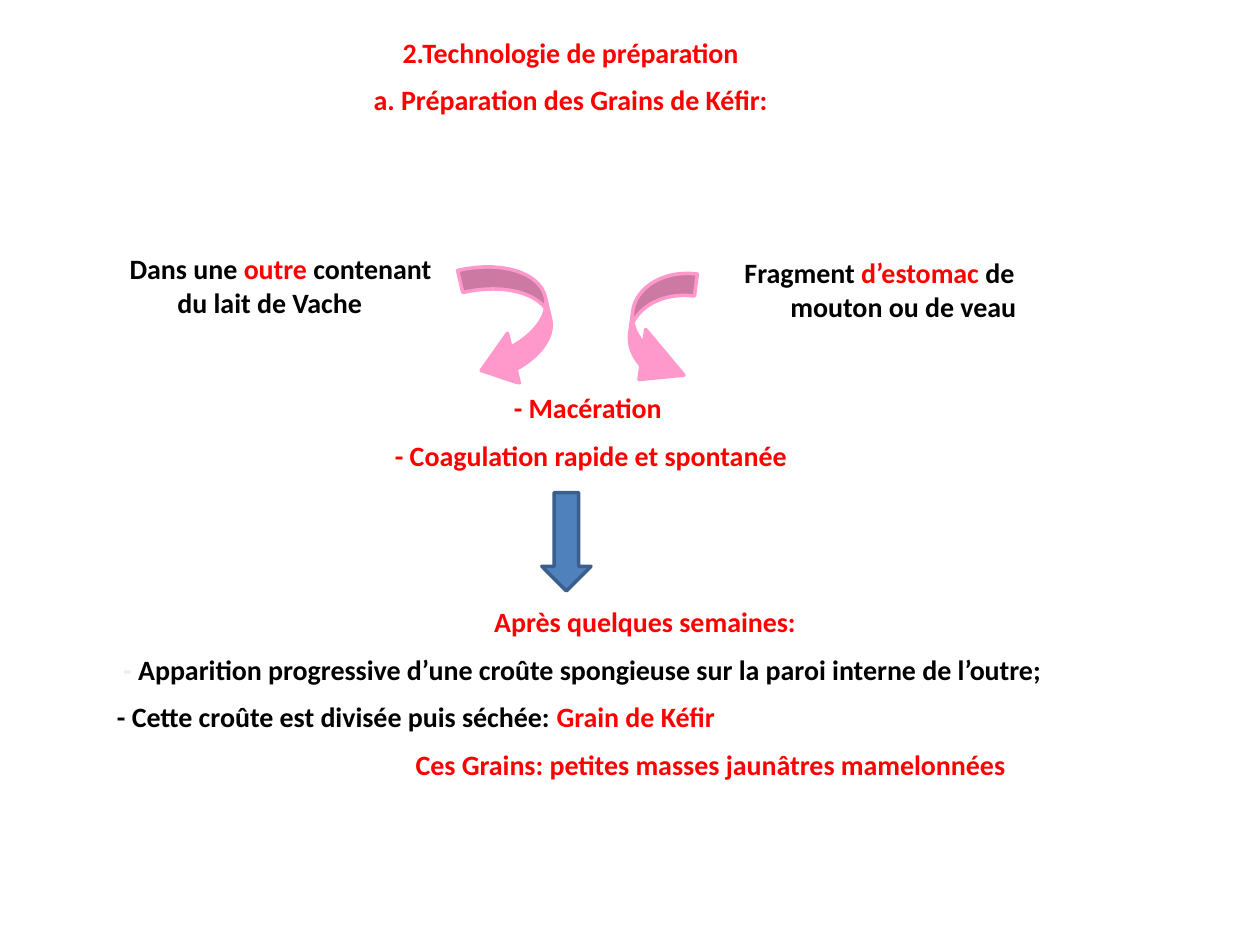
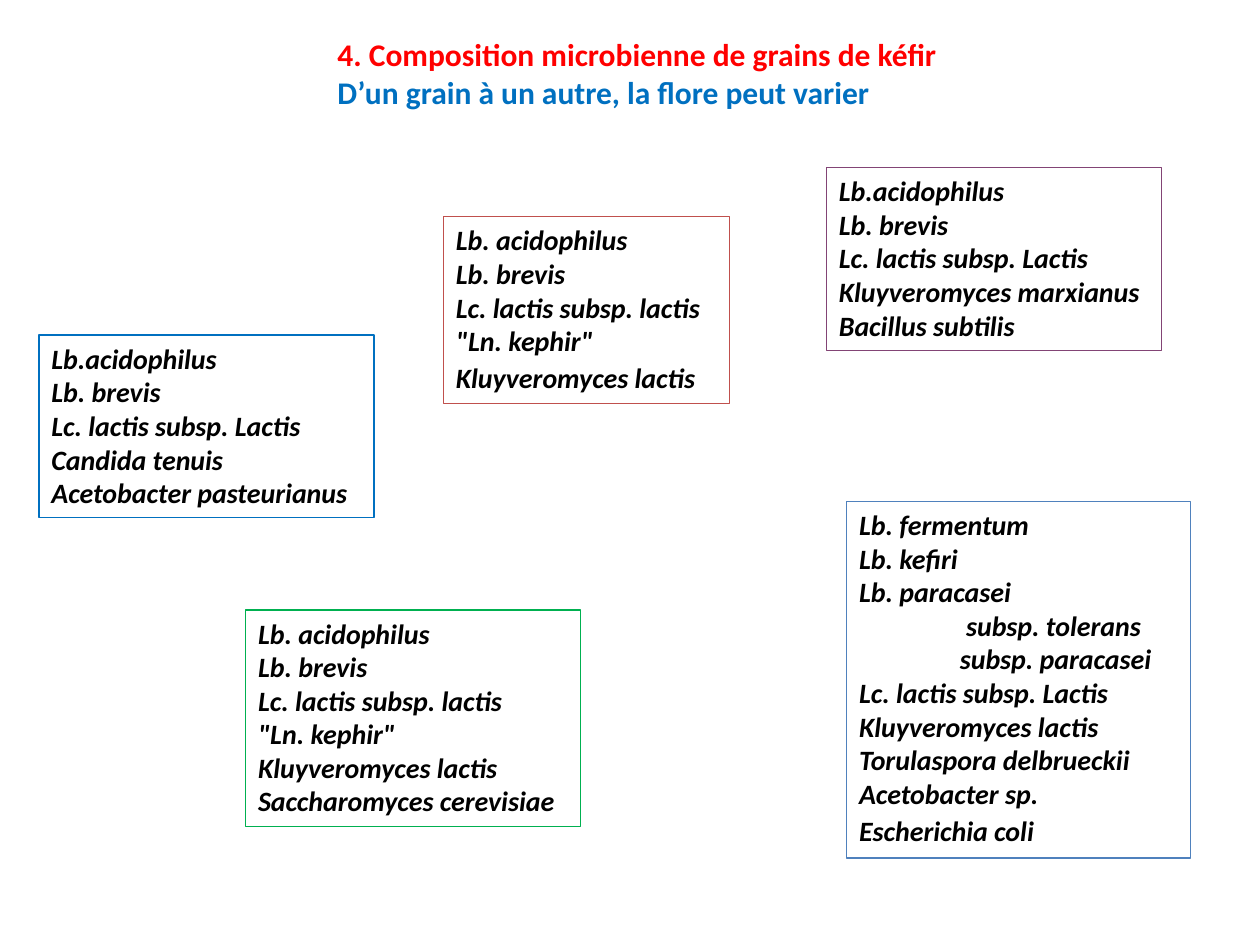
from dataclasses import dataclass
from typing import Optional

from pptx import Presentation
from pptx import util as u
from pptx.dml.color import RGBColor
from pptx.enum import shapes, text

FONT = "Calibri"
HANG = 0.38
COLORS = {
    "red": "FF0000",
    "black": "000000",
    "cream": "EEECE1",
    "white": "FFFFFF",
    "pink": "FF99CC",
    "blue": "4F81BD",
    "navy": "3A5F8C",
    "azure": "0070C0",
    "brick": "C0504D",
    "green": "00B050",
    "plum": "824475",
}
LEFT, CENTER = text.PP_ALIGN.LEFT, text.PP_ALIGN.CENTER
KINDS = shapes.MSO_SHAPE


@dataclass
class Line:
    spans: list[tuple[str, str]]
    align: text.PP_ALIGN = LEFT
    margin: float = 0
    indent: float = 0
    before: float = 0


@dataclass
class TextBlock:
    frame: tuple[float, float, float, float]
    lines: list[Line]
    size: int = 16
    italic: bool = False
    fill: Optional[str] = None
    outline: Optional[str] = None


@dataclass
class Arrow:
    frame: tuple[float, float, float, float]
    kind: shapes.MSO_SHAPE
    fill: str
    outline: str
    adjustments: tuple[float, ...] = ()
    rotation: float = 0
    flipped: bool = False


def color(name: str) -> RGBColor:
    return RGBColor.from_string(COLORS[name])


def inches(frame: tuple[float, float, float, float]) -> list[u.Length]:
    return [u.Inches(value) for value in frame]


def paint(shape, fill: Optional[str], outline: Optional[str], width: float) -> None:
    shape.shadow.inherit = False
    if fill:
        shape.fill.solid()
        shape.fill.fore_color.rgb = color(fill)
    else:
        shape.fill.background()
    if outline:
        shape.line.color.rgb = color(outline)
        shape.line.width = u.Pt(width)
    else:
        shape.line.fill.background()


def draw_text(page, block: TextBlock) -> None:
    if block.fill or block.outline:
        box = page.shapes.add_shape(KINDS.RECTANGLE, *inches(block.frame))
        paint(box, block.fill, block.outline, 0.75)
    else:
        box = page.shapes.add_textbox(*inches(block.frame))
    frame = box.text_frame
    frame.word_wrap = True
    frame.vertical_anchor = text.MSO_ANCHOR.TOP
    for index, line in enumerate(block.lines):
        para = frame.add_paragraph() if index else frame.paragraphs[0]
        para.alignment = line.align
        para.space_before = u.Pt(line.before if index else 0)
        properties = para._p.get_or_add_pPr()
        properties.set("marL", str(u.Inches(line.margin)))
        properties.set("indent", str(u.Inches(line.indent)))
        para.font.name = FONT
        para.font.size = u.Pt(block.size)
        para.font.bold = True
        para.font.italic = block.italic
        for words, name in line.spans:
            span = para.add_run()
            span.text = words
            span.font.color.rgb = color(name)


def draw_arrow(page, arrow: Arrow) -> None:
    shape = page.shapes.add_shape(arrow.kind, *inches(arrow.frame))
    paint(shape, arrow.fill, arrow.outline, 2)
    for index, value in enumerate(arrow.adjustments):
        shape.adjustments[index] = value
    shape.rotation = arrow.rotation
    if arrow.flipped:
        shape._element.spPr.xfrm.set("flipV", "1")


def hanging(*spans: tuple[str, str], align: text.PP_ALIGN = LEFT, shift: float = 0) -> Line:
    return Line(list(spans), align, HANG + shift, -HANG, 8)


def red_centered(words: str) -> Line:
    return hanging((words, "red"), align=CENTER)


def flora(frame: tuple[float, float, float, float], outline: str, names: list[str],
          margins: Optional[dict[str, float]] = None, last_gap: float = 0) -> TextBlock:
    lines = [Line([(name, "black")], margin=(margins or {}).get(name, 0)) for name in names]
    lines[-1].before = last_gap
    return TextBlock(frame, lines, italic=True, outline=outline)


PREPARATION = [
    TextBlock((2.03, 0.23, 5, 0.77), [
        red_centered("2.Technologie de préparation"),
        red_centered("a. Préparation des Grains de Kéfir:"),
    ]),
    TextBlock((0.93, 1.95, 2.68, 0.65), [
        hanging(("Dans une ", "black"), ("outre", "red"),
                (" contenant du lait de Vache", "black")),
    ], fill="white"),
    TextBlock((5.6, 1.98, 2.76, 0.65), [
        hanging(("Fragment ", "black"), ("d’estomac", "red"),
                (" de mouton ou de veau", "black"), align=CENTER),
    ], fill="white"),
    Arrow((3.74, 2.06, 0.63, 1.02), KINDS.CURVED_RIGHT_ARROW, "pink", "pink",
          (0.286, 0.65, 0.431), 166.7, True),
    Arrow((5, 2.14, 0.47, 1.01), KINDS.CURVED_RIGHT_ARROW, "pink", "pink",
          (0.375, 0.854, 0.742), 7.6),
    TextBlock((2.8, 3.05, 3.78, 0.78), [
        red_centered("- Macération "),
        red_centered("- Coagulation rapide et spontanée"),
    ], fill="white"),
    TextBlock((0.83, 4.75, 8.58, 1.58), [
        red_centered("Après quelques semaines:"),
        hanging(("- ", "cream"),
                ("Apparition progressive d’une croûte spongieuse sur la paroi "
                 "interne de l’outre;", "black"), shift=0.05),
        hanging(("- Cette croûte est divisée puis séchée: ", "black"),
                ("Grain de Kéfir", "red")),
        Line([("Ces Grains: petites masses jaunâtres mamelonnées", "red")],
             margin=2.37, before=8),
    ], fill="white"),
    Arrow((4.3, 3.91, 0.39, 0.78), KINDS.DOWN_ARROW, "blue", "navy"),
]

COMPOSITION = [
    TextBlock((2.58, 0.23, 5, 0.71), [
        Line([("4. Composition microbienne de grains de kéfir", "red")]),
        Line([("D’un grain à un autre, la flore peut varier", "azure")]),
    ], size=18),
    flora((3.52, 1.72, 2.27, 1.48), "brick",
          ["Lb. acidophilus", "Lb. brevis", "Lc. lactis subsp. lactis",
           '"Ln. kephir"', "Kluyveromyces lactis"], last_gap=2),
    flora((0.31, 2.66, 2.66, 1.45), "azure",
          ["Lb.acidophilus", "Lb. brevis", "Lc. lactis subsp. Lactis",
           "Candida tenuis", "Acetobacter pasteurianus"]),
    flora((1.95, 4.84, 2.66, 1.72), "green",
          ["Lb. acidophilus", "Lb. brevis", "Lc. lactis subsp. lactis",
           '"Ln. kephir"', "Kluyveromyces lactis", "Saccharomyces cerevisiae"]),
    flora((6.56, 1.33, 2.66, 1.45), "plum",
          ["Lb.acidophilus", "Lb. brevis", "Lc. lactis subsp. Lactis",
           "Kluyveromyces marxianus", "Bacillus subtilis"]),
    flora((6.72, 3.98, 2.73, 2.83), "blue",
          ["Lb. fermentum", "Lb. kefiri", "Lb. paracasei", "subsp. tolerans",
           "subsp. paracasei", "Lc. lactis subsp. Lactis", "Kluyveromyces lactis",
           "Torulaspora delbrueckii", "Acetobacter sp.", "Escherichia coli"],
          {"subsp. tolerans": 0.85, "subsp. paracasei": 0.8}, last_gap=2),
]


def main() -> None:
    deck = Presentation()
    deck.slide_width, deck.slide_height = u.Inches(10), u.Inches(7.5)
    for items in (PREPARATION, COMPOSITION):
        page = deck.slides.add_slide(deck.slide_layouts[6])
        for item in items:
            if isinstance(item, TextBlock):
                draw_text(page, item)
            else:
                draw_arrow(page, item)
    deck.save("out.pptx")


if __name__ == "__main__":
    main()
